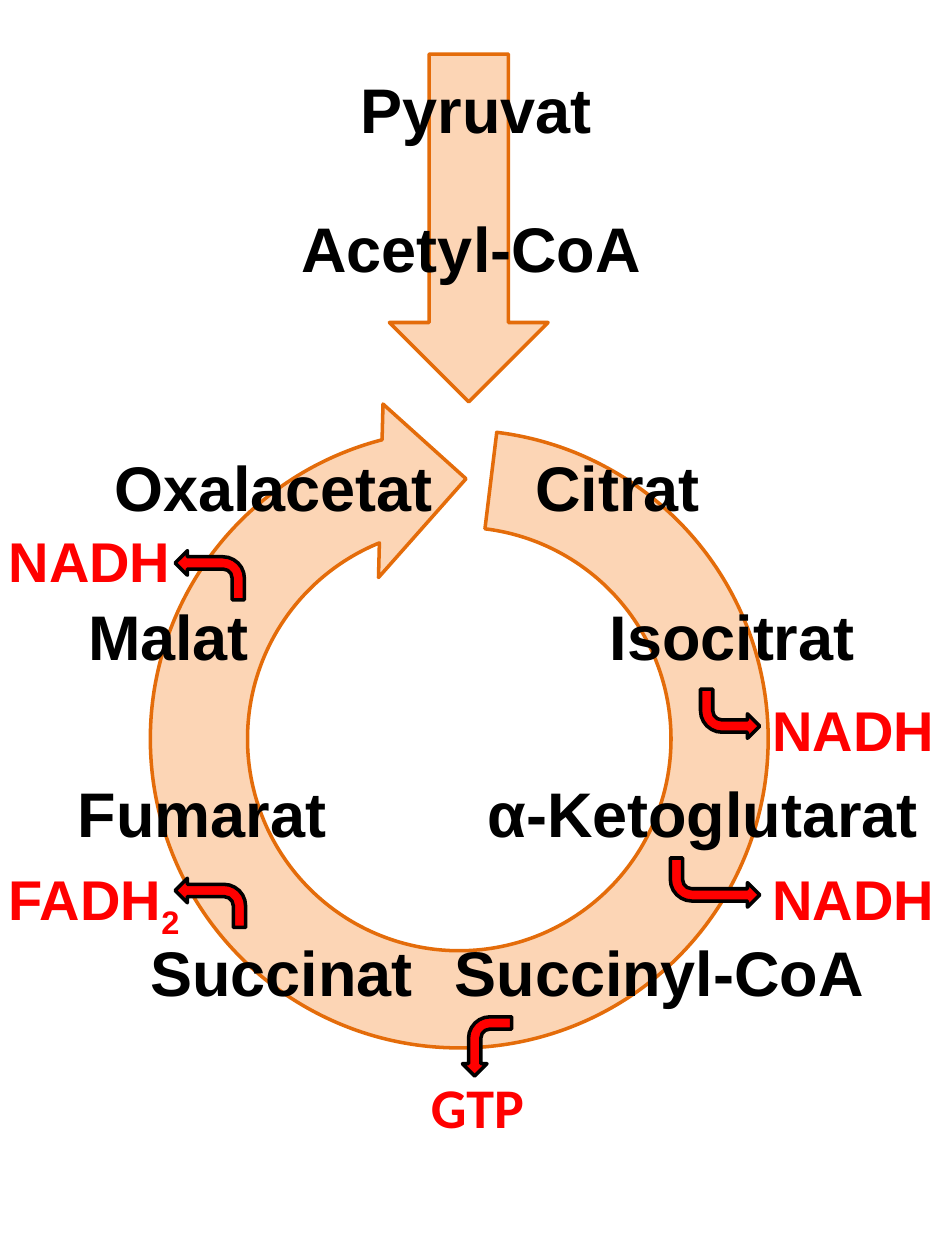
import pptx
import pptx.util
import pptx.dml.color
import pptx.enum.shapes
import pptx.enum.text

Inches = pptx.util.Inches
Pt = pptx.util.Pt
SHAPES = pptx.enum.shapes.MSO_SHAPE
ALIGN = pptx.enum.text.PP_ALIGN
RED, BLACK, PEACH, ORANGE = "FF0000", "000000", "FCD5B5", "E46C0A"

CYCLE = (0.89, 3.11, 5.51, 5.51)
CYCLE_ADJUSTMENTS = (0.14, 11.423, 208.59, 7.303, 0.125)
ENTRY = (2.34, 1.18, 2.76, 1.26)

METABOLITES = [
    ("Pyruvat", 2.7, 0.51, 2.16, ALIGN.CENTER),
    ("Acetyl-CoA", 2.15, 1.61, 3.18, ALIGN.CENTER),
    ("Citrat", 4.14, 3.51, 1.52, ALIGN.CENTER),
    ("Isocitrat", 4.74, 4.69, 2.23, ALIGN.LEFT),
    ("α-Ketoglutarat", 3.77, 6.1, 3.73, ALIGN.LEFT),
    ("Succinyl-CoA", 3.51, 7.36, 3.62, ALIGN.LEFT),
    ("Succinat", 1.04, 7.36, 2.39, ALIGN.CENTER),
    ("Fumarat", 0.52, 6.1, 2.36, ALIGN.LEFT),
    ("Malat", 0.6, 4.69, 1.81, ALIGN.LEFT),
    ("Oxalacetat", 0.81, 3.51, 2.94, ALIGN.LEFT),
]
CARRIERS = [
    ("NADH", "", -0.03, 4.13, 1.65, "Arial", ALIGN.LEFT),
    ("FADH", "2", -0.03, 6.81, 1.81, "Arial", ALIGN.LEFT),
    ("GTP", "", 3.12, 8.46, 1.34, "Calibri", ALIGN.CENTER),
    ("NADH", "", 6.03, 5.47, 1.65, "Arial", ALIGN.LEFT),
    ("NADH", "", 6.03, 6.81, 1.65, "Arial", ALIGN.LEFT),
]
RELEASES = [
    (5.56, 5.47, 0.47, "flipV", 0),
    (5.32, 6.81, 0.71, "flipV", 0),
    (1.39, 6.97, 0.56, "flipH", 0),
    (1.39, 4.37, 0.55, "flipH", 0),
    (3.63, 8.11, 0.47, "flipV", 90),
]


def rgb(value):
    return pptx.dml.color.RGBColor.from_string(value)


def add_arrow(slide, preset, place, fill, line, rotation=0):
    arrow = slide.shapes.add_shape(preset, *map(Inches, place))
    arrow.shadow.inherit = False
    arrow.fill.solid()
    arrow.fill.fore_color.rgb = rgb(fill)
    arrow.line.color.rgb = rgb(line)
    arrow.line.width = Pt(2)
    arrow.rotation = rotation
    return arrow


def add_label(slide, place, text, size, color, align, font="Arial", subscript=""):
    label = slide.shapes.add_textbox(*map(Inches, place))
    frame = label.text_frame
    frame.word_wrap = text != "Citrat"
    frame.auto_size = pptx.enum.text.MSO_AUTO_SIZE.SHAPE_TO_FIT_TEXT
    paragraph = frame.paragraphs[0]
    paragraph.alignment = align
    for part in filter(None, (text, subscript)):
        run = paragraph.add_run()
        run.text = part
        run.font.name = font
        run.font.size = Pt(size)
        run.font.bold = True
        run.font.color.rgb = rgb(color)
    if subscript:
        run.font._element.set("baseline", "-25000")


def main():
    deck = pptx.Presentation()
    deck.slide_width, deck.slide_height = Inches(7.5), Inches(10)
    slide = deck.slides.add_slide(deck.slide_layouts[6])

    cycle = add_arrow(slide, SHAPES.CIRCULAR_ARROW, CYCLE, PEACH, ORANGE, 264.8)
    for index, value in enumerate(CYCLE_ADJUSTMENTS):
        cycle.adjustments[index] = value
    add_arrow(slide, SHAPES.RIGHT_ARROW, ENTRY, PEACH, ORANGE, 90)

    for name, left, top, width, align in METABOLITES:
        add_label(slide, (left, top, width, 0.71), name, 36, BLACK, align)
    for name, subscript, left, top, width, font, align in CARRIERS:
        add_label(slide, (left, top, width, 0.64), name, 32, RED, align, font, subscript)
    for left, top, width, flip, rotation in RELEASES:
        release = add_arrow(slide, SHAPES.BENT_ARROW, (left, top, width, 0.39), RED, BLACK, rotation)
        release.element.spPr.get_or_add_xfrm().set(flip, "1")

    deck.save("out.pptx")


if __name__ == "__main__":
    main()
